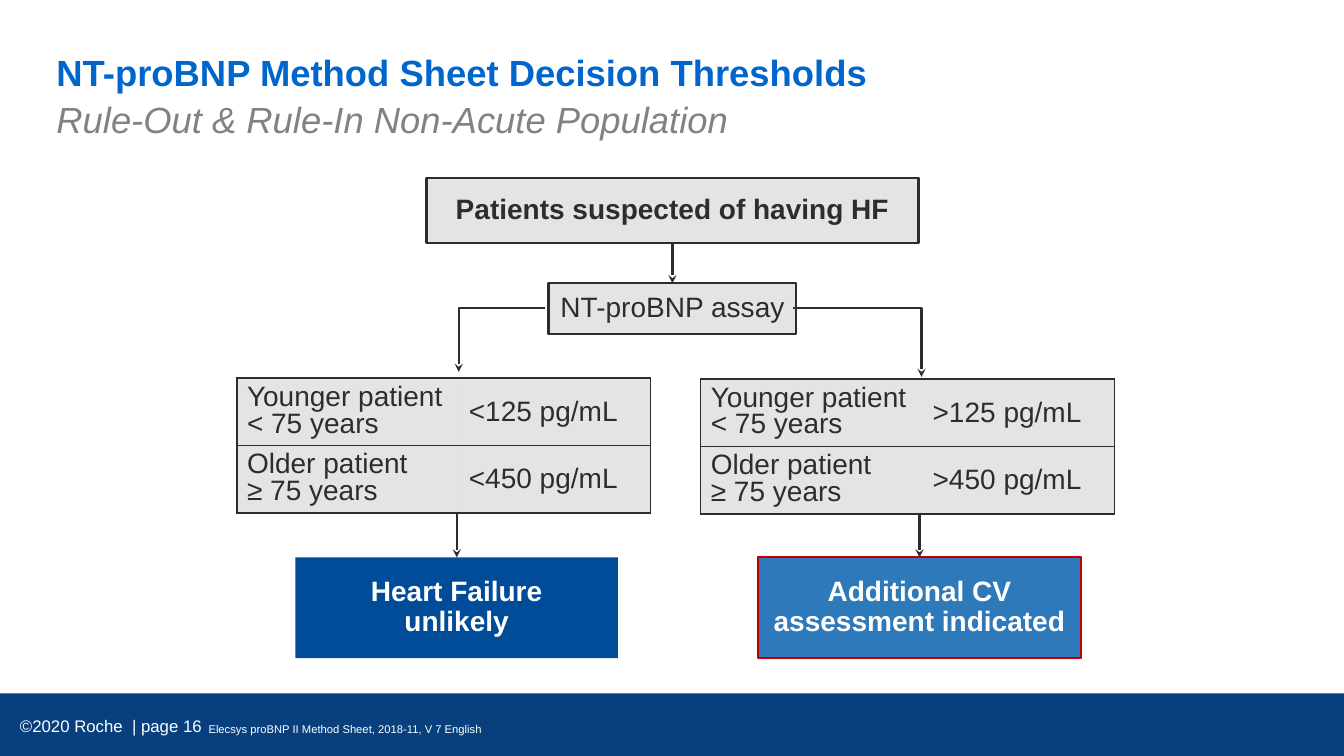
from lxml import etree
from pptx import Presentation
from pptx.dml.color import RGBColor
from pptx.enum.shapes import MSO_CONNECTOR, MSO_SHAPE
from pptx.enum.text import MSO_ANCHOR, PP_ALIGN
from pptx.oxml.ns import qn
from pptx.util import Inches, Pt

RECTANGLE = MSO_SHAPE.RECTANGLE
STRAIGHT = MSO_CONNECTOR.STRAIGHT
MIDDLE, TOP = MSO_ANCHOR.MIDDLE, MSO_ANCHOR.TOP
CENTER, LEFT = PP_ALIGN.CENTER, PP_ALIGN.LEFT
FONT = "Arial"
SHADE_OPACITY = 68000
COLORS = {
    "ink": "2D2D2D", "shade": "D8D8D8", "white": "FFFFFF", "footer": "08407E",
    "title": "0066CC", "subtitle": "808285",
    "unlikely": "004C99", "indicated": "2E79BA", "alert": "C00000",
}

LABELS = [
    {"text": "NT-proBNP Method Sheet Decision Thresholds", "at": (0.56, 0.5, 11.36, 0.45),
     "size": 26, "color": "title", "bold": True, "inset": 0},
    {"text": "Rule-Out & Rule-In Non-Acute Population", "at": (0.56, 0.96, 11.36, 0.6),
     "size": 26, "color": "subtitle", "italic": True, "inset": 0},
    {"text": "©2020 Roche  | page 16", "at": (0.1, 7, 3.57, 0.4),
     "size": 12, "color": "white", "anchor": MIDDLE},
    {"text": "Elecsys proBNP II Method Sheet, 2018-11, V 7 English", "at": (1.97, 7.12, 6, 0.24),
     "size": 8, "color": "white"},
]
FOOTER_BAND = (0, 6.88, 13.33, 0.62)
SUSPECTED = ("Patients suspected of having HF", (4.23, 1.77, 4.88, 0.64))
ASSAY = ("NT-proBNP assay", (5.44, 2.81, 2.46, 0.5))
AGE_GROUPS = [["Younger patient", "< 75 years"], ["Older patient", "≥ 75 years"]]
BRANCHES = [
    {"elbow": [(5.41, 3.06), (4.55, 3.06), (4.55, 3.69)],
     "table": (2.35, 3.75), "limits": ["<125 pg/mL", "<450 pg/mL"],
     "outcome": ["Heart Failure", "unlikely"], "left": 2.93, "fill": "unlikely", "line": None},
    {"elbow": [(7.87, 3.06), (9.14, 3.06), (9.14, 3.74)],
     "table": (6.95, 3.76), "limits": [">125 pg/mL", ">450 pg/mL"],
     "outcome": ["Additional CV", "assessment indicated"], "left": 7.52,
     "fill": "indicated", "line": "alert"},
]
COLUMN_WIDTHS = (2.2, 1.9)
ROW_HEIGHT = 0.67
OUTCOME_TOP, OUTCOME_WIDTH, OUTCOME_HEIGHT = 5.53, 3.2, 1
ARROW_TOP = 5.1


def rgb(name):
    return RGBColor.from_string(COLORS[name])


def add_span(para, text, size, color, bold=False, italic=False):
    span = para.add_run()
    span.text = text
    font = span.font
    font.name, font.size, font.bold, font.italic = FONT, Pt(size), bold, italic
    font.color.rgb = rgb(color)


def make_translucent(properties):
    color = properties.find(qn("a:solidFill"))[0]
    etree.SubElement(color, qn("a:alpha"), val=str(SHADE_OPACITY))


def add_label(page, text, at, size, color, bold=False, italic=False, inset=None, anchor=TOP):
    frame = page.shapes.add_textbox(*map(Inches, at)).text_frame
    frame.word_wrap = True
    frame.vertical_anchor = anchor
    if inset is not None:
        frame.margin_left = frame.margin_right = Inches(inset)
        frame.margin_top = frame.margin_bottom = Inches(inset)
    add_span(frame.paragraphs[0], text, size, color, bold, italic)


def add_box(page, at, fill, line=None, lines=(), color="ink", bold=False):
    box = page.shapes.add_shape(RECTANGLE, *map(Inches, at))
    box.shadow.inherit = False
    box.fill.solid()
    box.fill.fore_color.rgb = rgb(fill)
    if fill == "shade":
        make_translucent(box._element.spPr)
    if line:
        box.line.color.rgb = rgb(line)
        box.line.width = Pt(1.5)
    else:
        box.line.fill.background()
    frame = box.text_frame
    frame.word_wrap = True
    frame.vertical_anchor = MIDDLE
    para = frame.paragraphs[0]
    para.alignment = CENTER
    para.line_spacing = 0.9
    for index, text in enumerate(lines):
        if index:
            para.add_line_break()
        add_span(para, text, 20, color, bold)
    return box


def style_arrow(arrow):
    arrow.line.color.rgb = rgb("ink")
    arrow.line.width = Pt(1.5)
    properties = arrow._element.spPr
    etree.SubElement(properties.find(qn("a:ln")), qn("a:tailEnd"), type="stealth")
    if properties.find(qn("a:effectLst")) is None:
        etree.SubElement(properties, qn("a:effectLst"))


def add_arrow(page, x, top, target, source=None):
    arrow = page.shapes.add_connector(STRAIGHT, x, top, x, target.top)
    if source is not None:
        arrow.begin_connect(source, 2)
    arrow.end_connect(target, 0)
    style_arrow(arrow)


def add_elbow(page, points):
    start, *rest = [tuple(map(Inches, point)) for point in points]
    builder = page.shapes.build_freeform(*start)
    builder.add_line_segments(rest, close=False)
    elbow = builder.convert_to_shape()
    elbow.fill.background()
    style_arrow(elbow)


def style_cell(cell, open_side):
    properties = cell._tc.get_or_add_tcPr()
    for side in ("lnL", "lnR", "lnT", "lnB"):
        border = etree.SubElement(properties, qn("a:" + side), w=str(Pt(1)))
        if side == open_side:
            etree.SubElement(border, qn("a:noFill"))
        else:
            paint = etree.SubElement(border, qn("a:solidFill"))
            etree.SubElement(paint, qn("a:srgbClr"), val=COLORS["ink"])
    cell.fill.solid()
    cell.fill.fore_color.rgb = rgb("shade")
    make_translucent(properties)
    cell.vertical_anchor = MIDDLE


def add_thresholds(page, corner, limits):
    size = (sum(COLUMN_WIDTHS), ROW_HEIGHT * len(limits))
    table = page.shapes.add_table(len(limits), 2, *map(Inches, corner + size)).table
    table.first_row = table.horz_banding = False
    for column, width in zip(table.columns, COLUMN_WIDTHS):
        column.width = Inches(width)
    for row, (group, limit) in enumerate(zip(AGE_GROUPS, limits)):
        for column, (lines, spacing, open_side) in enumerate(
                [(group, 0.85, "lnR"), ([limit], 1.0, "lnL")]):
            cell = table.cell(row, column)
            style_cell(cell, open_side)
            frame = cell.text_frame
            for index, text in enumerate(lines):
                para = frame.add_paragraph() if index else frame.paragraphs[0]
                para.alignment = LEFT
                para.line_spacing = spacing
                add_span(para, text, 20, "ink")


def main():
    deck = Presentation()
    deck.slide_width, deck.slide_height = Inches(13.33), Inches(7.5)
    page = deck.slides.add_slide(deck.slide_layouts[6])

    add_box(page, FOOTER_BAND, "footer")
    for label in LABELS:
        add_label(page, **label)

    assay = add_box(page, ASSAY[1], "shade", "ink", [ASSAY[0]])
    suspected = add_box(page, SUSPECTED[1], "shade", "ink", [SUSPECTED[0]], bold=True)
    add_arrow(page, suspected.left + suspected.width // 2,
              suspected.top + suspected.height, assay, suspected)

    for branch in BRANCHES:
        add_elbow(page, branch["elbow"])
        add_thresholds(page, branch["table"], branch["limits"])
        outcome = add_box(page, (branch["left"], OUTCOME_TOP, OUTCOME_WIDTH, OUTCOME_HEIGHT),
                          branch["fill"], branch["line"], branch["outcome"], "white", True)
        add_arrow(page, outcome.left + outcome.width // 2, Inches(ARROW_TOP), outcome)

    deck.save("out.pptx")


if __name__ == "__main__":
    main()
